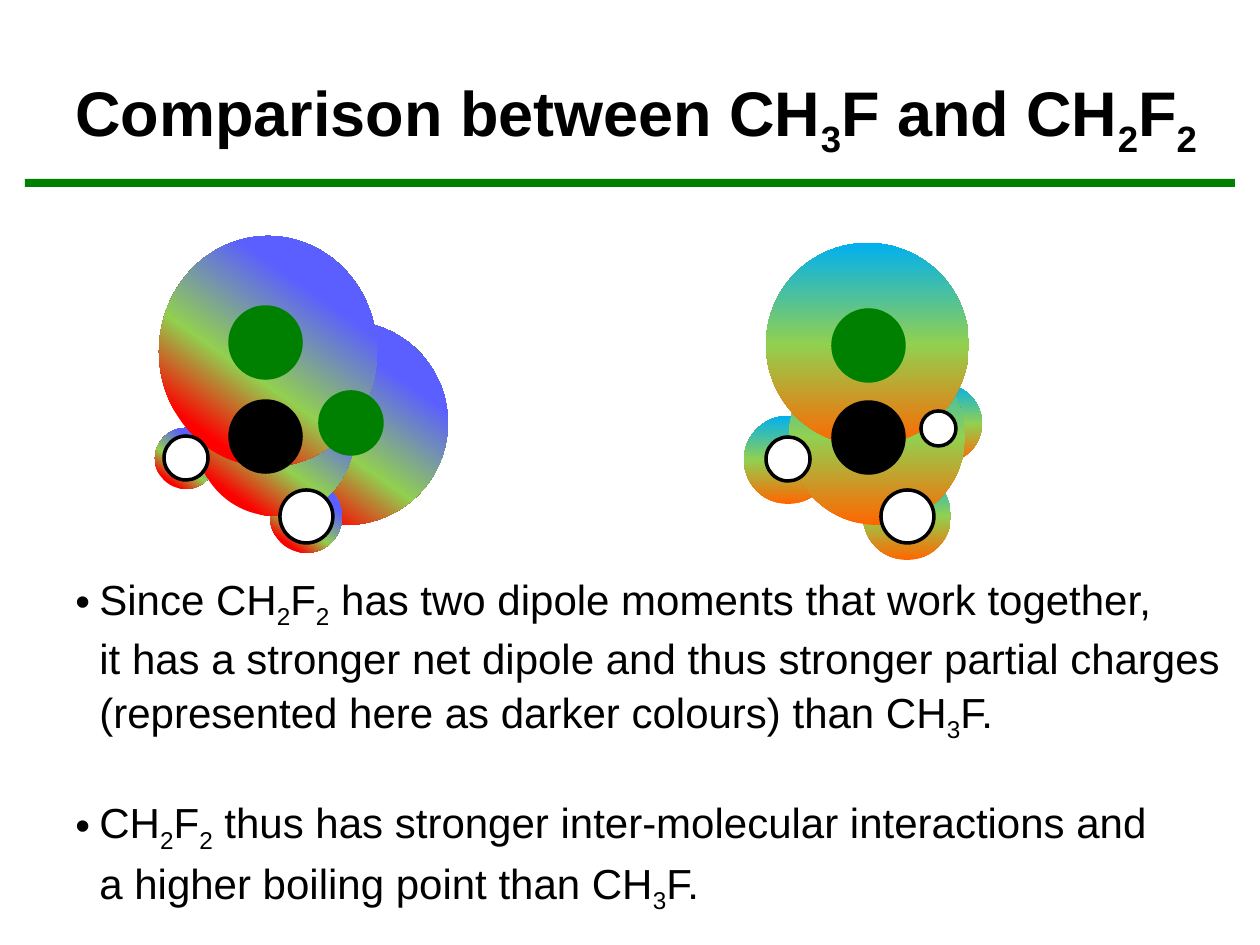
from copy import deepcopy
from itertools import groupby

from lxml.etree import SubElement
from pptx import Presentation
from pptx.dml.color import RGBColor
from pptx.enum.shapes import MSO_SHAPE
from pptx.enum.text import MSO_ANCHOR
from pptx.oxml.ns import qn
from pptx.util import Pt

SCALE = 914400 / 126
BLACK = RGBColor(0, 0, 0)
WHITE = RGBColor(255, 255, 255)
GREEN = RGBColor(0, 128, 0)
RED = RGBColor(255, 0, 0)
ORANGE = RGBColor(255, 102, 0)
LIME = RGBColor(146, 208, 80)
SKY = RGBColor(0, 176, 240)
VIOLET = RGBColor(91, 95, 255)

STRONG = ((17, RED), (41, LIME), (74, VIOLET))
WEAK = ((0, ORANGE), (50, LIME), (100, SKY))

TITLE = "Comparison between CH3F and CH2F2"
POINTS = (
    "Since CH2F2 has two dipole moments that work together,\n"
    "it has a stronger net dipole and thus stronger partial charges\n"
    "(represented here as darker colours) than CH3F.",
    "CH2F2 thus has stronger inter-molecular interactions and\n"
    "a higher boiling point than CH3F.",
)


def px(count):
    """Turn pixels into EMU."""
    return round(count * SCALE)


def add_solid(shapes, kind, box, fill, line=None):
    """Add a plain shape, outlined when a line colour is given."""
    shape = shapes.add_shape(kind, *map(px, box))
    shape.shadow.inherit = False
    shape.fill.solid()
    shape.fill.fore_color.rgb = fill
    if line is None:
        shape.line.fill.background()
    else:
        shape.line.color.rgb = line
        shape.line.width = Pt(2)
    return shape


def add_lobe(shapes, box, ramp, angle):
    """Add an oval of the charge cloud with a three-stop gradient."""
    shape = add_solid(shapes, MSO_SHAPE.OVAL, box, WHITE)
    shape.fill.gradient()
    shape.fill.gradient_angle = angle
    stops = shape._element.spPr.find(qn("a:gradFill")).find(qn("a:gsLst"))
    stops.append(deepcopy(stops[-1]))
    for stop, (place, color) in zip(shape.fill.gradient_stops, ramp):
        stop.color.rgb = color
        stop.position = place / 100


def add_model(slide, left, top, lobes, atoms, ramp, angle):
    """Draw a molecule as a group: charge cloud first, atoms on top."""
    shapes = slide.shapes.add_group_shape().shapes
    for x, y, wide, high in lobes:
        add_lobe(shapes, (left + x, top + y, wide, high), ramp, angle)
    for x, y, size, fill in atoms:
        line = BLACK if fill == WHITE else fill
        box = (left + x, top + y, size, size)
        add_solid(shapes, MSO_SHAPE.OVAL, box, fill, line)


def add_text(slide, box, anchor):
    """Add an empty wrapping text box and return its frame."""
    frame = slide.shapes.add_textbox(*map(px, box)).text_frame
    frame.word_wrap = True
    frame.vertical_anchor = anchor
    return frame


def set_text(para, text, size, bold=False):
    """Fill a paragraph, lowering every digit of a formula."""
    for row, line in enumerate(text.split("\n")):
        if row:
            para.add_line_break()
        for digit, chars in groupby(line, str.isdigit):
            run = para.add_run()
            run.text = "".join(chars)
            font = run.font
            font.name, font.size, font.bold = "Arial", Pt(size), bold
            font.color.rgb = BLACK
            if digit:
                font._element.set("baseline", "-25000")


def add_head(slide, left, top, wide, high):
    """Place the title and the green rule near its foot."""
    frame = add_text(slide, (left, top, wide, high), MSO_ANCHOR.MIDDLE)
    set_text(frame.paragraphs[0], TITLE, 36, True)
    rule = (left - 38, top + 141, 1210, 8)
    add_solid(slide.shapes, MSO_SHAPE.RECTANGLE, rule, GREEN)


def add_points(slide, left, top, wide, high):
    """Place the bulleted conclusions."""
    frame = add_text(slide, (left, top, wide, high), MSO_ANCHOR.TOP)
    for index, text in enumerate(POINTS):
        para = frame.add_paragraph() if index else frame.paragraphs[0]
        props = para._p.get_or_add_pPr()
        props.set("marL", str(px(24)))
        props.set("indent", str(px(-24)))
        SubElement(props, qn("a:buFont")).set("typeface", "Arial")
        SubElement(props, qn("a:buChar")).set("char", "•")
        para.line_spacing = 1.05
        if index:
            para.space_before = Pt(29)
        set_text(para, text, 24)


def main():
    """Build and save the slide."""
    deck = Presentation()
    deck.slide_width, deck.slide_height = px(1260), px(945)
    slide = deck.slides.add_slide(deck.slide_layouts[6])
    add_head(slide, 63, 38, 1197, 157)
    add_model(
        slide, 744, 243,
        ((0, 173, 88, 88), (119, 229, 88, 88), (159, 141, 79, 79),
         (45, 106, 176, 176), (22, 0, 203, 203)),
        ((89, 159, 71, BLACK), (89, 67, 71, GREEN), (177, 168, 35, WHITE),
         (22, 194, 44, WHITE), (137, 247, 53, WHITE)),
        WEAK, 90,
    )
    add_model(
        slide, 155, 236,
        ((89, 85, 204, 204), (0, 192, 61, 61), (115, 245, 72, 72),
         (41, 122, 158, 158), (4, 0, 218, 231)),
        ((75, 165, 71, BLACK), (75, 71, 71, GREEN), (9, 200, 44, WHITE),
         (125, 254, 53, WHITE), (165, 156, 62, GREEN)),
        STRONG, 55,
    )
    add_points(slide, 63, 564, 1193, 367)
    deck.save("out.pptx")


if __name__ == "__main__":
    main()
